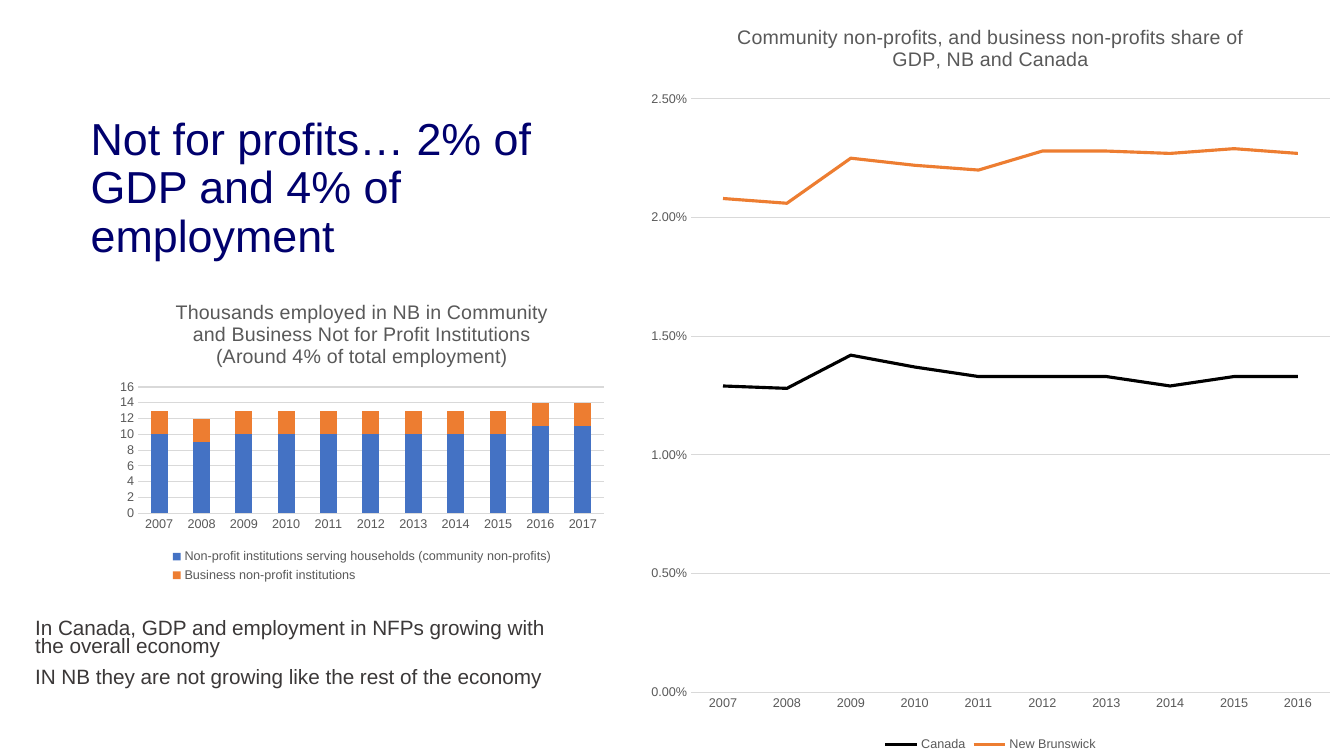
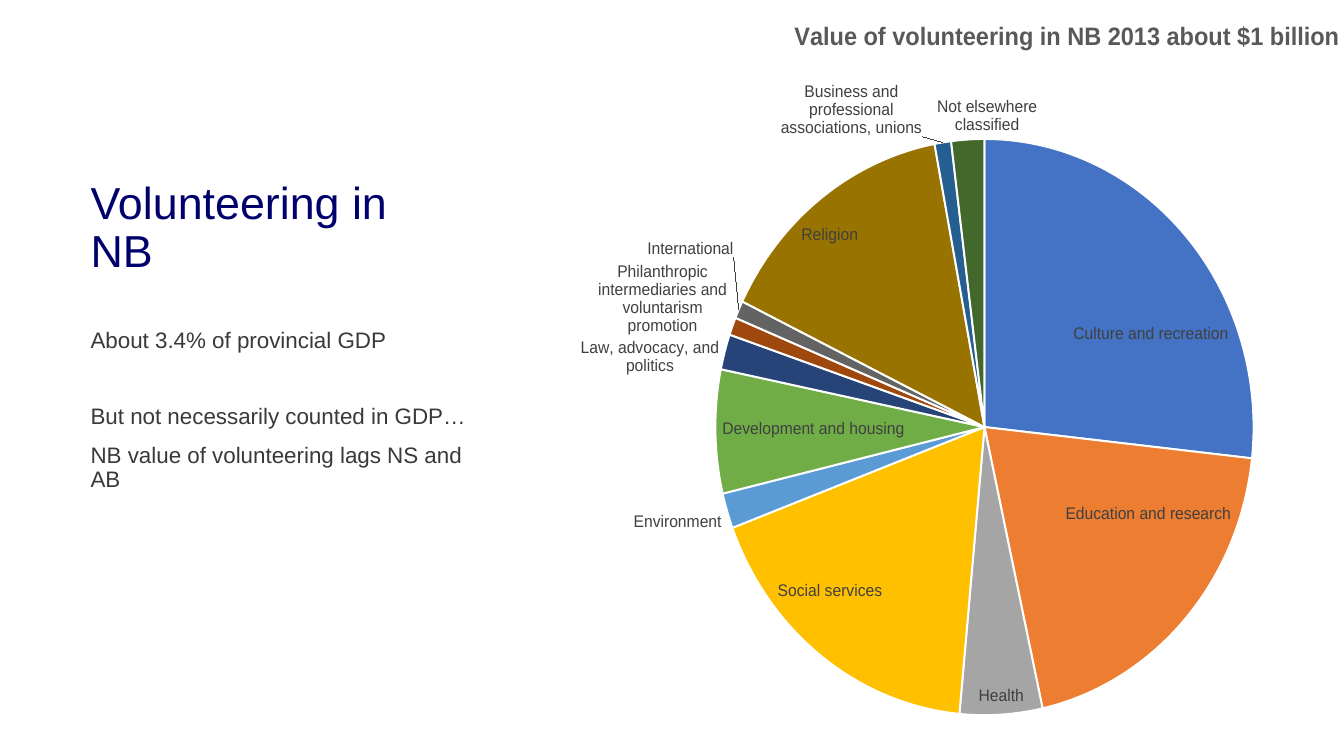
"""Build two slides on non-profits and volunteering in New Brunswick."""
from pptx import Presentation
from pptx import util as u
from pptx.chart.data import CategoryChartData
from pptx.dml.color import RGBColor
from pptx.enum import chart as kinds, text
from pptx.oxml import parse_xml
from pptx.oxml.ns import nsdecls, qn

WIDTH, HEIGHT = 13.33, 7.5
FONT = "Arial"
NAVY, BODY, GREY, LABEL, GRID = "00006D", "3B3838", "595959", "404040", "D9D9D9"
BLACK, WHITE, BLUE, ORANGE = "000000", "FFFFFF", "4472C4", "ED7D31"

TITLE = dict(size=32, color=NAVY)
YEARS = [str(year) for year in range(2007, 2018)]

SLIDES = [
    dict(
        title=("Not for profits… 2% of GDP and 4% of employment", (0.8, 1.11, 5.39, 1.72)),
        body=([("In Canada, GDP and employment in NFPs growing with the overall economy", 0),
               ("IN NB they are not growing like the rest of the economy", 10)],
              (0.25, 6.12, 5.26, 0.94), dict(size=14.8, spacing=0.7)),
        charts=[
            dict(kind="LINE_MARKERS", box=(6.32, 0, 7.01, 7.5),
                 title="Community non-profits, and business non-profits share of GDP, NB and Canada",
                 categories=YEARS[:-1], scale=(0.025, 0.005, "0.00%"),
                 series=[("Canada", BLACK, [0.0129, 0.0128, 0.0142, 0.0137, 0.0133,
                                            0.0133, 0.0133, 0.0129, 0.0133, 0.0133]),
                         ("New Brunswick", ORANGE, [0.0208, 0.0206, 0.0225, 0.0222, 0.022,
                                                    0.0228, 0.0228, 0.0227, 0.0229, 0.0227])]),
            dict(kind="COLUMN_STACKED", box=(1.09, 2.82, 5, 3),
                 title="Thousands employed in NB in Community and Business Not for Profit "
                       "Institutions (Around 4% of total employment)",
                 categories=YEARS, scale=(16, 2, "General"),
                 series=[("Non-profit institutions serving households (community non-profits)", BLUE,
                          [10, 9, 10, 10, 10, 10, 10, 10, 10, 11, 11]),
                         ("Business non-profit institutions", ORANGE, [3] * 11)]),
        ]),
    dict(
        title=("Volunteering in NB", (0.8, 1.74, 3.66, 1.08)),
        body=([("About 3.4% of provincial GDP", 0),
               ("But not necessarily counted in GDP…", 37),
               ("NB value of volunteering lags NS and AB", 10)],
              (0.8, 3.22, 4.18, 3.12), dict(size=16)),
        charts=[
            dict(kind="PIE", box=(5.39, 0, 7.94, 7.5), plot=(0.23, 0.18, 0.72, 0.77),
                 title="Value of volunteering in NB 2013 about $1 billion",
                 title_format=dict(size=18, bold=True), title_at=(0.33, 0.02),
                 slices=[("Culture and recreation", 27, BLUE),
                         ("Education and research", 20, ORANGE),
                         ("Health", 5, "A5A5A5"),
                         ("Social services", 18, "FFC000"),
                         ("Environment", 2, "5B9BD5"),
                         ("Development and housing", 7, "70AD47"),
                         ("Law, advocacy, and politics", 2, "264478"),
                         ("Philanthropic intermediaries and voluntarism promotion", 1, "9E480E"),
                         ("International", 1, "636363"),
                         ("Religion", 15, "997300"),
                         ("Business and professional associations, unions", 1, "255E91"),
                         ("Not elsewhere classified", 2, "43682B")]),
        ]),
]


def rgb(value):
    return RGBColor.from_string(value)


def inches(box):
    return [u.Inches(length) for length in box]


def set_font(font, size, color, bold=False):
    font.name, font.size, font.bold = FONT, u.Pt(size), bold
    font.color.rgb = rgb(color)


def set_line(line, color, width):
    line.color.rgb, line.width = rgb(color), u.Pt(width)


def add_text(slide, paragraphs, box, size, color, spacing=0.9):
    frame = slide.shapes.add_textbox(*inches(box)).text_frame
    frame.word_wrap, frame.vertical_anchor = True, text.MSO_ANCHOR.TOP
    for index, (words, before) in enumerate(paragraphs):
        paragraph = frame.paragraphs[0] if index == 0 else frame.add_paragraph()
        paragraph.line_spacing, paragraph.space_before = spacing, u.Pt(before)
        run = paragraph.add_run()
        run.text = words
        set_font(run.font, size, color)


def place(parent, position, inner=False):
    """Give a chart part its place as shares of the chart."""
    for old in parent.findall(qn("c:layout")):
        parent.remove(old)
    names = ("x", "y", "w", "h")[:len(position)]
    target = '<c:layoutTarget val="inner"/>' if inner else ""
    modes = "".join(f'<c:{name}Mode val="edge"/>' for name in "xy")
    shares = "".join(f'<c:{name} val="{share}"/>' for name, share in zip(names, position))
    layout = parse_xml(f'<c:layout {nsdecls("c")}><c:manualLayout>{target}{modes}{shares}'
                       "</c:manualLayout></c:layout>")
    parent.insert(0 if inner else 1, layout)


def format_axes(chart, scale):
    top, step, number_format = scale
    for axis in (chart.category_axis, chart.value_axis):
        axis.major_tick_mark = axis.minor_tick_mark = kinds.XL_TICK_MARK.NONE
        set_font(axis.tick_labels.font, 9, GREY)
    set_line(chart.category_axis.format.line, GRID, 0.75)
    values = chart.value_axis
    values.minimum_scale, values.maximum_scale, values.major_unit = 0, top, step
    values.format.line.fill.background()
    values.has_major_gridlines = True
    set_line(values.major_gridlines.format.line, GRID, 0.75)
    values.tick_labels.number_format = number_format
    values.tick_labels.number_format_is_linked = False


def format_series(chart, item):
    plot = chart.plots[0]
    for series, (_, color, _) in zip(plot.series, item["series"]):
        if item["kind"] == "LINE_MARKERS":
            series.smooth = False
            series.marker.style = kinds.XL_MARKER_STYLE.NONE
            set_line(series.format.line, color, 2.25)
        else:
            series.format.fill.solid()
            series.format.fill.fore_color.rgb = rgb(color)
            plot.gap_width, plot.overlap = 150, 100
    chart.has_legend = True
    chart.legend.position = kinds.XL_LEGEND_POSITION.BOTTOM
    chart.legend.include_in_layout = False
    set_font(chart.legend.font, 9, GREY)


def format_slices(chart, slices):
    chart.has_legend = False
    plot = chart.plots[0]
    for index, (_, _, color) in enumerate(slices):
        form = plot.series[0].points[index].format
        form.fill.solid()
        form.fill.fore_color.rgb = rgb(color)
        set_line(form.line, WHITE, 1.5)
    plot.has_data_labels = True
    labels = plot.data_labels
    labels.show_category_name, labels.show_value, labels.show_percentage = True, False, False
    labels.position = kinds.XL_LABEL_POSITION.BEST_FIT
    set_font(labels.font, 12, LABEL)


def add_chart(slide, item):
    data = CategoryChartData()
    slices = item.get("slices")
    if slices:
        data.categories = [name for name, _, _ in slices]
        data.add_series("Series 1", [value for _, value, _ in slices])
    else:
        data.categories = item["categories"]
        for name, _, values in item["series"]:
            data.add_series(name, values)
    kind = getattr(kinds.XL_CHART_TYPE, item["kind"])
    chart = slide.shapes.add_chart(kind, *inches(item["box"]), data).chart
    set_font(chart.font, 10, BLACK)
    chart.plots[0].vary_by_categories = bool(slices)
    chart.has_title = True
    chart.chart_title.include_in_layout = False
    run = chart.chart_title.text_frame.paragraphs[0].add_run()
    run.text = item["title"]
    set_font(run.font, **{"size": 14, "color": GREY, **item.get("title_format", {})})
    if slices:
        place(chart.element.find(".//" + qn("c:title")), item["title_at"])
        place(chart.element.find(".//" + qn("c:plotArea")), item["plot"], inner=True)
        format_slices(chart, slices)
    else:
        format_axes(chart, item["scale"])
        format_series(chart, item)


def main():
    presentation = Presentation()
    presentation.slide_width, presentation.slide_height = inches((WIDTH, HEIGHT))
    for content in SLIDES:
        slide = presentation.slides.add_slide(presentation.slide_layouts[6])
        words, box = content["title"]
        add_text(slide, [(words, 0)], box, **TITLE)
        paragraphs, box, style = content["body"]
        add_text(slide, paragraphs, box, color=BODY, **style)
        for item in content["charts"]:
            add_chart(slide, item)
    presentation.save("out.pptx")


if __name__ == "__main__":
    main()
